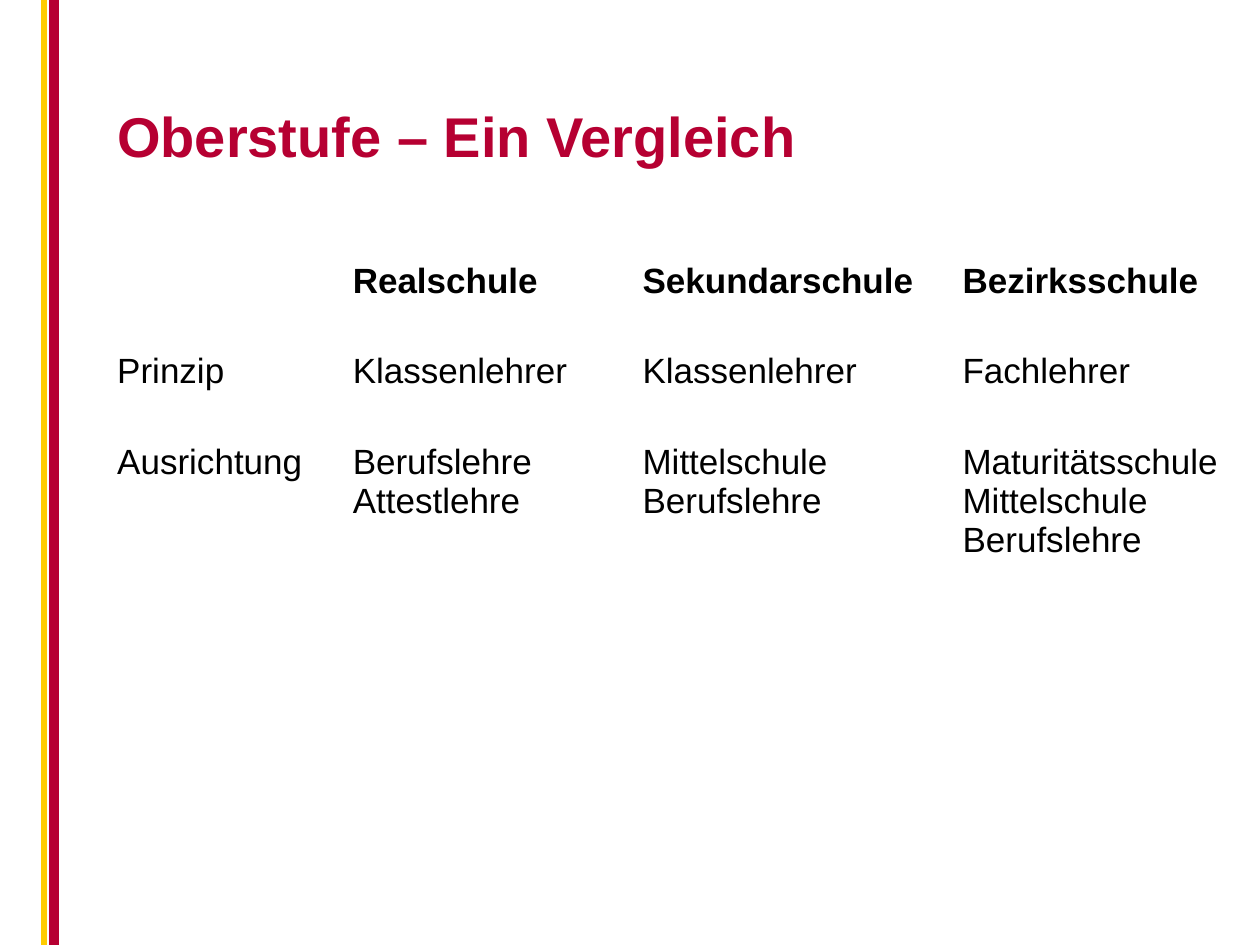
"""Build a slide that compares three upper-level school types in a table."""
from dataclasses import dataclass

import pptx
import pptx.dml.color
import pptx.enum.shapes
import pptx.enum.text
import pptx.oxml.ns
import pptx.util
from lxml import etree

In, Pt = pptx.util.Inches, pptx.util.Pt
WIDTH, HEIGHT = 10, 7.5
LEFT = 0.083 * WIDTH
FONT = "Arial"
COLORS = {"red": "B60032", "yellow": "FFCC00", "text": "000000"}
COLUMNS = (1.87, 2.3, 2.54, 2.26)
ROWS = (0.72, 0.72, 1.19, 2.63)
CELLS = (
    ("", "Realschule", "Sekundarschule", "Bezirksschule"),
    ("Prinzip", "Klassenlehrer", "Klassenlehrer", "Fachlehrer"),
    ("Ausrichtung", "Berufslehre\nAttestlehre", "Mittelschule\nBerufslehre",
     "Maturitätsschule\nMittelschule\nBerufslehre"),
    ("", "", "", ""),
)


@dataclass(frozen=True)
class Stripe:
    x: float
    weight: float
    color: str


STRIPES = (Stripe(0.043, 6, "red"), Stripe(0.035, 3, "yellow"))


def rgb(name: str) -> pptx.dml.color.RGBColor:
    return pptx.dml.color.RGBColor.from_string(COLORS[name])


def style(p, size: float, color: str, bold: bool) -> None:
    p.alignment = pptx.enum.text.PP_ALIGN.LEFT
    p.font.name, p.font.size, p.font.bold = FONT, Pt(size), bold
    p.font.color.rgb = rgb(color)


def draw_stripe(slide, stripe: Stripe) -> None:
    x = In(stripe.x * WIDTH)
    line = slide.shapes.add_connector(
        pptx.enum.shapes.MSO_CONNECTOR.STRAIGHT, x, 0, x, In(HEIGHT))
    line.line.width = Pt(stripe.weight)
    line.line.color.rgb = rgb(stripe.color)
    etree.SubElement(line._element.spPr, pptx.oxml.ns.qn("a:effectLst"))


def draw_title(slide, text: str) -> None:
    sp = slide.shapes.title
    sp.left, sp.top = In(LEFT), In(0.048 * HEIGHT)
    sp.width, sp.height = In(0.867 * WIDTH), In(0.19 * HEIGHT)
    tf = sp.text_frame
    tf.text = text
    tf.auto_size = pptx.enum.text.MSO_AUTO_SIZE.NONE
    tf.vertical_anchor = pptx.enum.text.MSO_ANCHOR.MIDDLE
    p = tf.paragraphs[0]
    p.space_before = Pt(6)
    style(p, 32, "red", True)


def draw_table(slide) -> None:
    table = slide.shapes.add_table(
        len(ROWS), len(COLUMNS), In(LEFT), In(0.27 * HEIGHT),
        In(sum(COLUMNS)), In(sum(ROWS))).table
    table.first_row = table.horz_banding = False
    for column, width in zip(table.columns, COLUMNS):
        column.width = In(width)
    for r, (height, texts) in enumerate(zip(ROWS, CELLS)):
        table.rows[r].height = In(height)
        for c, text in enumerate(texts):
            cell = table.cell(r, c)
            cell.fill.background()
            cell.text = text
            for p in cell.text_frame.paragraphs:
                style(p, 20, "text", r == 0)
    last = len(ROWS) - 1
    table.cell(last, 0).merge(table.cell(last, len(COLUMNS) - 1))


def main() -> None:
    prs = pptx.Presentation()
    prs.slide_width, prs.slide_height = In(WIDTH), In(HEIGHT)
    slide = prs.slides.add_slide(prs.slide_layouts.get_by_name("Title Only"))
    for stripe in STRIPES:
        draw_stripe(slide, stripe)
    draw_title(slide, "Oberstufe – Ein Vergleich")
    draw_table(slide)
    prs.save("out.pptx")


if __name__ == "__main__":
    main()
